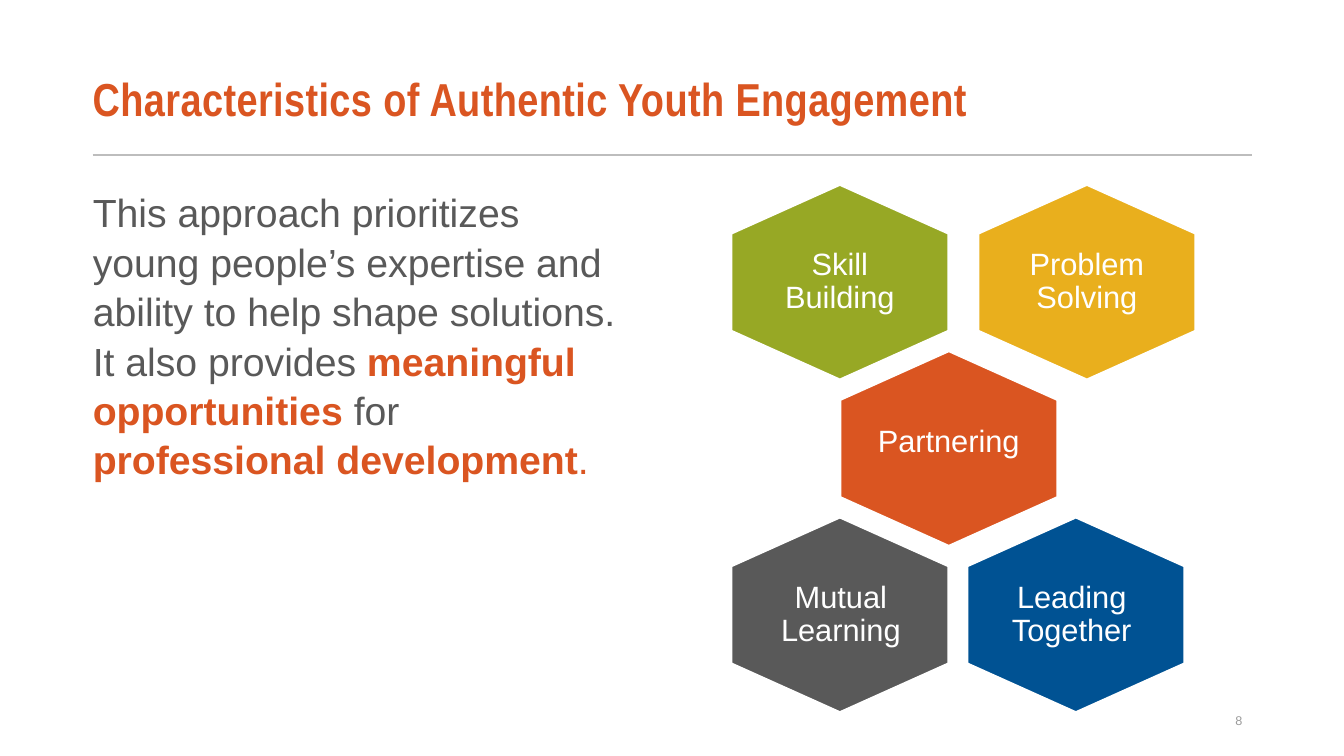
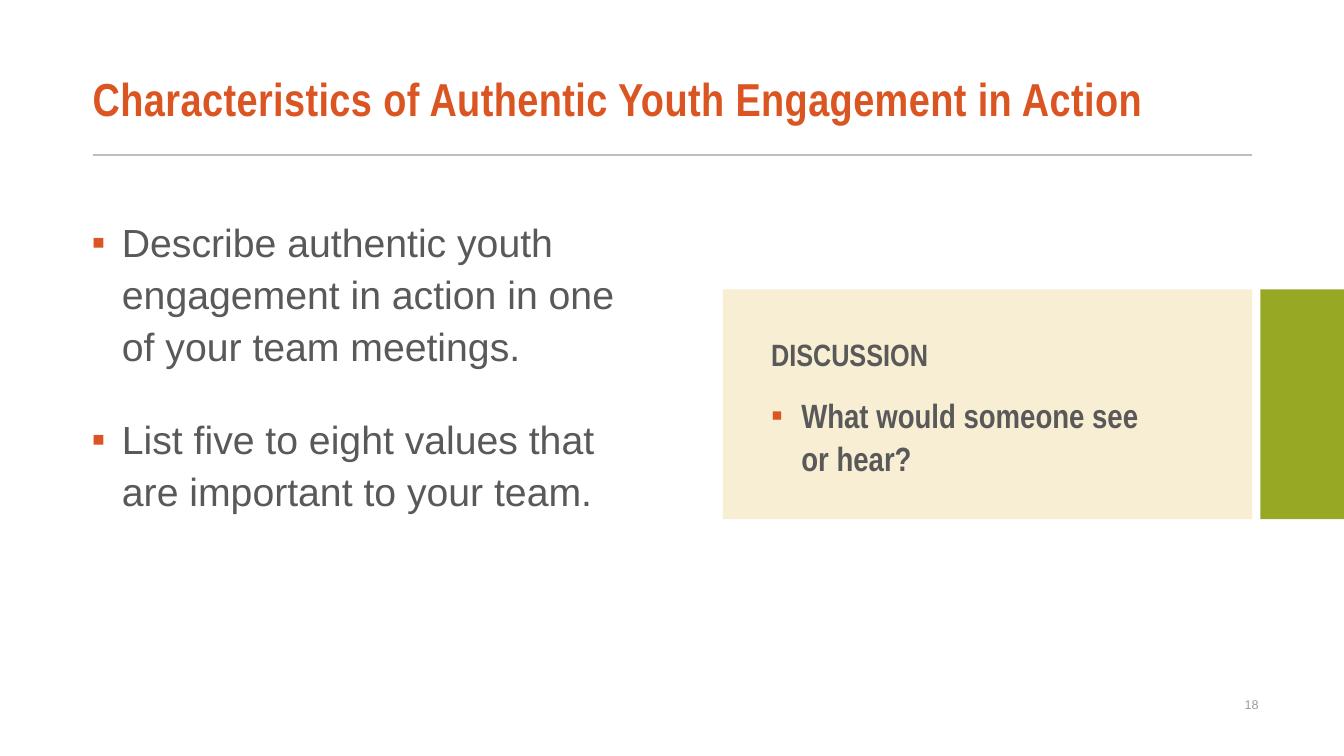
from dataclasses import dataclass

from lxml.etree import SubElement
from pptx import Presentation
from pptx.dml.color import RGBColor
from pptx.enum.shapes import MSO_CONNECTOR, MSO_SHAPE
from pptx.enum.text import MSO_ANCHOR, PP_ALIGN
from pptx.oxml.ns import qn
from pptx.util import Pt

SCALE = 9144  # EMU per px, 100 px to the inch


def px(n):
    return int(n * SCALE)


@dataclass(frozen=True)
class Theme:
    # Colours
    orange: str = "DA5521"
    green: str = "97A825"
    gold: str = "E9AF1D"
    blue: str = "005293"
    gray: str = "595959"
    cream: str = "F7EED4"
    rule: str = "BDBDBD"
    faint: str = "9B9B9B"
    white: str = "FFFFFF"
    # Fonts and type sizes
    sans: str = "Arial"
    narrow: str = "Arial Narrow"
    title: int = 33
    body: int = 28
    prompt: int = 24
    label: int = 22
    number: int = 9


T = Theme()


def write(frame, parts, size, color=T.gray, font=T.sans, bold=False,
          align=PP_ALIGN.LEFT, line=None, before=None, after=None,
          bullet=False, track=0):
    """Add a paragraph; parts is a string or a list of (text, color, bold)."""
    first = frame.paragraphs[0]
    para = frame.add_paragraph() if first.runs else first
    para.alignment = align
    if line:
        para.line_spacing = line
    if before:
        para.space_before = Pt(before)
    if after:
        para.space_after = Pt(after)
    if bullet:
        props = para._p.get_or_add_pPr()
        props.set("marL", str(px(30)))
        props.set("indent", str(px(-30)))
        tint = SubElement(props, qn("a:buClr"))
        SubElement(tint, qn("a:srgbClr"), val=T.orange)
        SubElement(props, qn("a:buFont"), typeface=T.sans)
        SubElement(props, qn("a:buChar"), char="▪")
    if isinstance(parts, str):
        parts = [(parts, color, bold)]
    for text, tone, heavy in parts:
        run = para.add_run()
        run.text = text
        run.font.name = font
        run.font.size = Pt(size)
        run.font.bold = heavy
        run.font.color.rgb = RGBColor.from_string(tone)
        if track:
            run._r.get_or_add_rPr().set("spc", str(track))


class Deck:
    def __init__(self):
        self.file = Presentation()
        self.file.slide_width = px(1333)
        self.file.slide_height = px(750)
        self.slide = None

    def page(self, title, number, box):
        """Start a slide with the shared rule, title and page number."""
        self.slide = self.file.slides.add_slide(self.file.slide_layouts[6])
        self.line(92, 154, 1242, 154)
        frame = self.text(92, 54, 1150, 95, inset=(0, 5, 10, 5), middle=True)
        write(frame, title, T.title, T.orange, T.narrow, True,
              line=0.87, track=30)
        frame = self.text(*box, middle=True)
        write(frame, str(number), T.number, T.faint, align=PP_ALIGN.RIGHT)

    def line(self, x1, y1, x2, y2):
        rule = self.slide.shapes.add_connector(
            MSO_CONNECTOR.STRAIGHT, px(x1), px(y1), px(x2), px(y2))
        rule.line.color.rgb = RGBColor.from_string(T.rule)
        rule.line.width = Pt(1.5)
        SubElement(rule._element.spPr, qn("a:effectLst"))

    def text(self, x, y, w, h, inset=(10, 5, 10, 5), middle=False):
        box = self.slide.shapes.add_textbox(px(x), px(y), px(w), px(h))
        frame = box.text_frame
        frame.word_wrap = True
        frame.margin_left, frame.margin_top = px(inset[0]), px(inset[1])
        frame.margin_right, frame.margin_bottom = px(inset[2]), px(inset[3])
        frame.vertical_anchor = MSO_ANCHOR.MIDDLE if middle else MSO_ANCHOR.TOP
        return frame

    def shape(self, kind, x, y, w, h, fill, edge=None):
        item = self.slide.shapes.add_shape(kind, px(x), px(y), px(w), px(h))
        item.shadow.inherit = False
        item.fill.solid()
        item.fill.fore_color.rgb = RGBColor.from_string(fill)
        if edge:
            item.line.color.rgb = RGBColor.from_string(edge)
            item.line.width = Pt(2)
        else:
            item.line.fill.background()
        return item

    def hexagon(self, x, y, fill, lines, dx=0, dy=0):
        """Draw a pointed-top hexagon centred on x, y with its label."""
        w, h = 194, 216
        item = self.shape(MSO_SHAPE.HEXAGON, x - w / 2, y - h / 2, w, h,
                          fill, T.white)
        item.adjustments[0] = 0.25
        item.rotation = 90
        w, h = 150, 134
        frame = self.text(x + dx - w / 2, y + dy - h / 2, w, h,
                          inset=(0, 0, 0, 0), middle=True)
        for text in lines:
            write(frame, text, T.label, T.white, align=PP_ALIGN.CENTER,
                  line=0.9)


def traits(deck):
    deck.page("Characteristics of Authentic Youth Engagement", 8,
              (942, 695, 300, 40))
    # Lead paragraph
    frame = deck.text(92, 180, 541, 510, inset=(0, 5, 10, 5))
    write(frame, [
        ("This approach prioritizes young people’s expertise and ability to "
         "help shape solutions. It also provides ", T.gray, False),
        ("meaningful opportunities ", T.orange, True),
        ("for ", T.gray, False),
        ("professional development", T.orange, True),
        (".", T.orange, False),
    ], T.body, line=1.05)
    # Hexagon cluster, three rows at equal steps
    left, top, step = 833, 280, 165
    deck.hexagon(941, top + step, T.orange, ["Partnering"], dy=-6)
    deck.hexagon(left, top, T.green, ["Skill Building"])
    deck.hexagon(1078, top, T.gold, ["Problem", "Solving"])
    deck.hexagon(1067, top + 2 * step, T.blue, ["Leading Together"], dx=-4)
    deck.hexagon(left, top + 2 * step, T.gray, ["Mutual Learning"], dx=1)


def action(deck):
    deck.page("Characteristics of Authentic Youth Engagement in Action", 18,
              (969, 679, 289, 39))
    # Tasks
    frame = deck.text(91, 207, 556, 489, inset=(0, 5, 10, 5))
    for task in (
        "Describe authentic youth engagement in action in one of your team "
        "meetings.",
        "List five to eight values that are important to your team.",
    ):
        write(frame, task, T.body, line=1.1, after=30, bullet=True)
    # Discussion panel and side tab
    y, h = 287, 228
    deck.shape(MSO_SHAPE.RECTANGLE, 717, y, 525, h, T.cream)
    deck.shape(MSO_SHAPE.RECTANGLE, 1250, y, 83, h, T.green)
    frame = deck.text(755, 331, 417, 194)
    write(frame, "DISCUSSION", T.label, font=T.narrow, bold=True,
          line=0.95, before=14)
    write(frame, "What would someone see or hear?", T.prompt, font=T.narrow,
          bold=True, line=1.05, before=14, bullet=True)


def main():
    deck = Deck()
    traits(deck)
    action(deck)
    deck.file.save("out.pptx")


if __name__ == "__main__":
    main()
